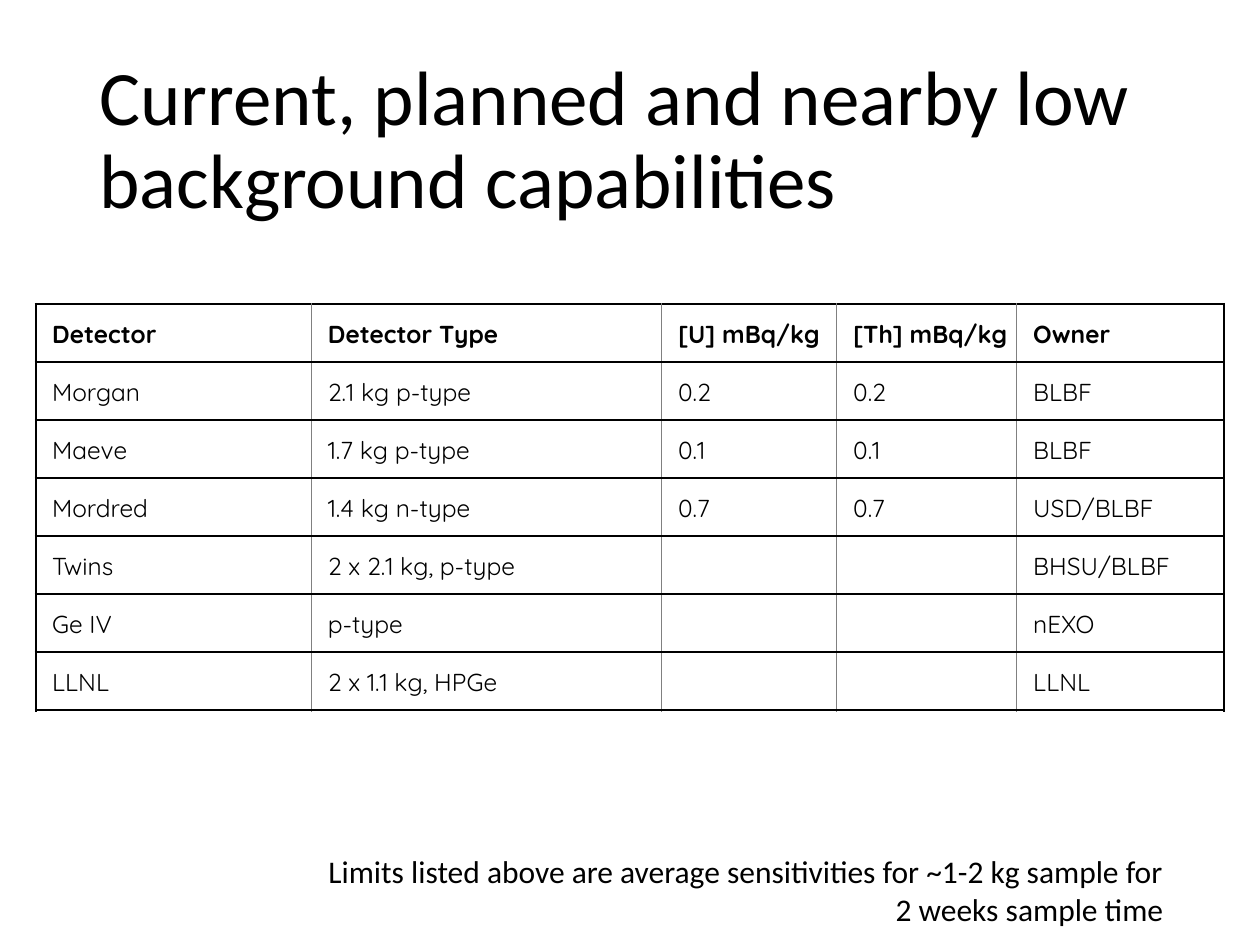
from lxml.etree import SubElement
from pptx import Presentation
from pptx.dml.color import RGBColor
from pptx.enum.text import MSO_ANCHOR as Anchor, MSO_AUTO_SIZE as AutoSize, PP_ALIGN as Align
from pptx.oxml.ns import qn
from pptx.util import Cm, Pt

HEADER = ["Detector", "Detector Type", "[U] mBq/kg", "[Th] mBq/kg", "Owner"]
DETECTORS = [
    ["Morgan", "2.1 kg p-type", "0.2", "0.2", "BLBF"],
    ["Maeve", "1.7 kg p-type", "0.1", "0.1", "BLBF"],
    ["Mordred", "1.4 kg n-type", "0.7", "0.7", "USD/BLBF"],
    ["Twins", "2 x 2.1 kg, p-type", "", "", "BHSU/BLBF"],
    ["Ge IV", "p-type", "", "", "nEXO"],
    ["LLNL", "2 x 1.1 kg, HPGe", "", "", "LLNL"],
]
COL_WIDTHS = [5.56, 7.06, 3.53, 3.63, 4.17]
ROW_HEIGHT = 1.17


def rgb(value):
    return RGBColor.from_string(value)


class SlideBuilder:
    text_font = "Calibri"
    table_font = "Quicksand"
    ink = "000000"
    heavy = ("000000", 1.5)
    light = ("808080", 0.5)

    def __init__(self, slide):
        self.slide = slide

    def run(self, p, text, size, font, bold=False):
        r = p.add_run()
        r.text = text
        r.font.size = Pt(size)
        r.font.name = font
        r.font.bold = bold
        r.font.color.rgb = rgb(self.ink)

    def title(self, text, x, y, w, h):
        sp = self.slide.shapes.title
        sp.left, sp.top, sp.width, sp.height = Cm(x), Cm(y), Cm(w), Cm(h)
        tf = sp.text_frame
        tf.auto_size = AutoSize.NONE
        tf.vertical_anchor = Anchor.MIDDLE
        p = tf.paragraphs[0]
        p.alignment = Align.LEFT
        p.line_spacing = 0.9
        self.run(p, text, 44, self.text_font)

    def note(self, text, x, y, w, h):
        tf = self.slide.shapes.add_textbox(Cm(x), Cm(y), Cm(w), Cm(h)).text_frame
        tf.word_wrap = True
        tf.auto_size = AutoSize.SHAPE_TO_FIT_TEXT
        p = tf.paragraphs[0]
        p.alignment = Align.RIGHT
        self.run(p, text, 18, self.text_font)

    def borders(self, cell, left, right):
        """Rule a cell heavily above and below, and as given at its sides."""
        tc_pr = cell._tc.get_or_add_tcPr()
        sides = {"L": left, "R": right, "T": self.heavy, "B": self.heavy}
        for side, (color, width) in sides.items():
            ln = SubElement(tc_pr, qn(f"a:ln{side}"), w=str(Pt(width)))
            fill = SubElement(ln, qn("a:solidFill"))
            SubElement(fill, qn("a:srgbClr"), val=color)

    def cell(self, cell, text, bold):
        cell.fill.background()
        cell.vertical_anchor = Anchor.BOTTOM
        if text:
            cell.margin_left, cell.margin_right = Cm(0.33), Cm(0.03)
            cell.margin_top = cell.margin_bottom = Cm(0.25)
            self.run(cell.text_frame.paragraphs[0], text, 14, self.table_font, bold)

    def table(self, rows, col_widths, row_height, x, y):
        last = len(col_widths) - 1
        table = self.slide.shapes.add_table(
            len(rows), len(col_widths), Cm(x), Cm(y),
            Cm(sum(col_widths)), Cm(row_height * len(rows))).table
        table.first_row = table.horz_banding = False
        for column, width in zip(table.columns, col_widths):
            column.width = Cm(width)
        for i, values in enumerate(rows):
            table.rows[i].height = Cm(row_height)
            for j, text in enumerate(values):
                cell = table.cell(i, j)
                self.borders(cell, self.heavy if j == 0 else self.light,
                             self.heavy if j == last else self.light)
                self.cell(cell, text, bold=i == 0)


def main():
    prs = Presentation()
    prs.slide_width, prs.slide_height = Cm(25.4), Cm(19.05)
    title_only = prs.slide_layouts[5]
    s = SlideBuilder(prs.slides.add_slide(title_only))
    s.title("Current, planned and nearby low background capabilities",
            1.75, 1.02, 21.9, 3.68)
    s.note("Limits listed above are average sensitivities for ~1-2 kg sample "
           "for 2 weeks sample time", 6.33, 17.06, 17.37, 1.8)
    s.table([HEADER] + DETECTORS, COL_WIDTHS, ROW_HEIGHT, 0.72, 6.13)
    prs.save("out.pptx")


if __name__ == "__main__":
    main()
